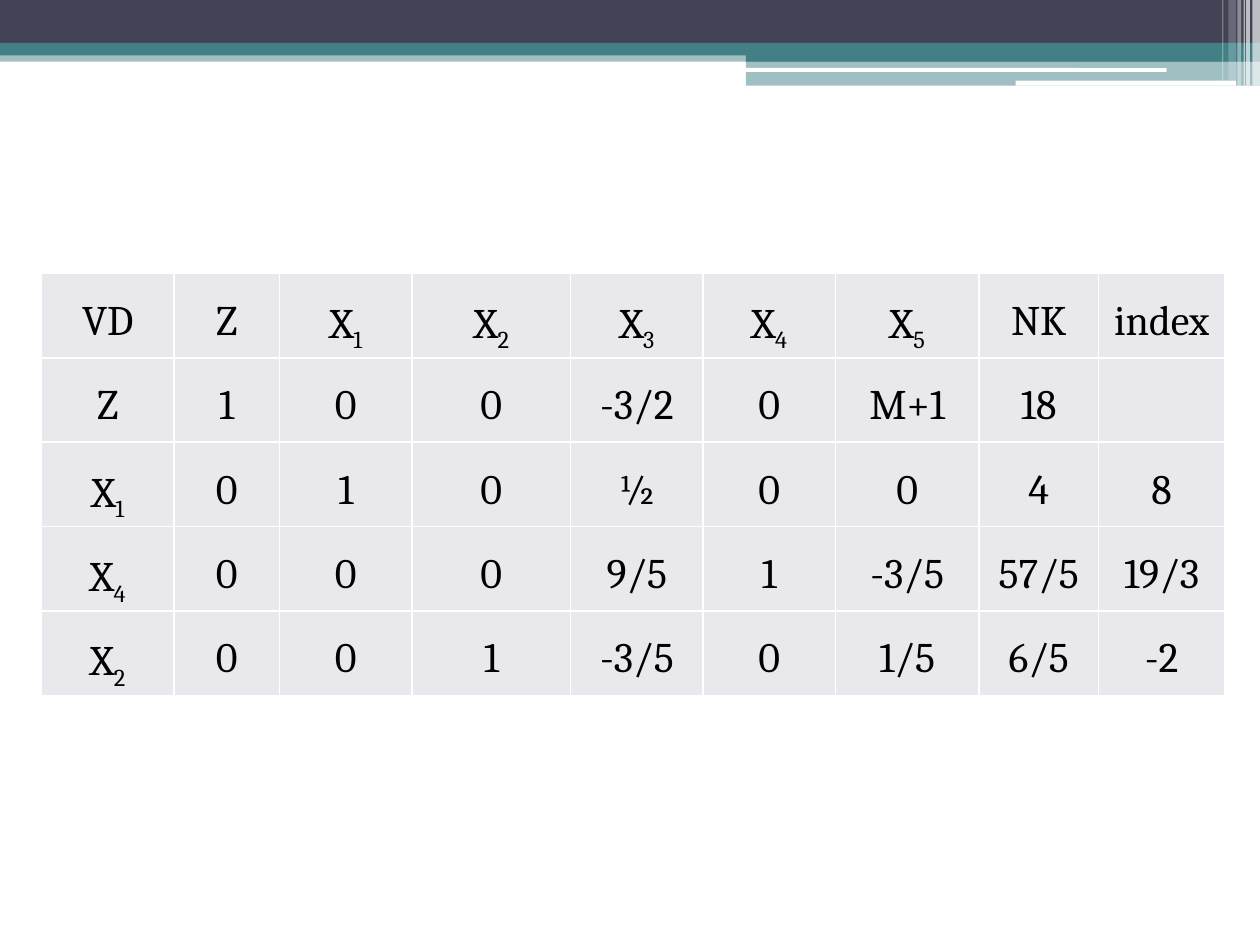
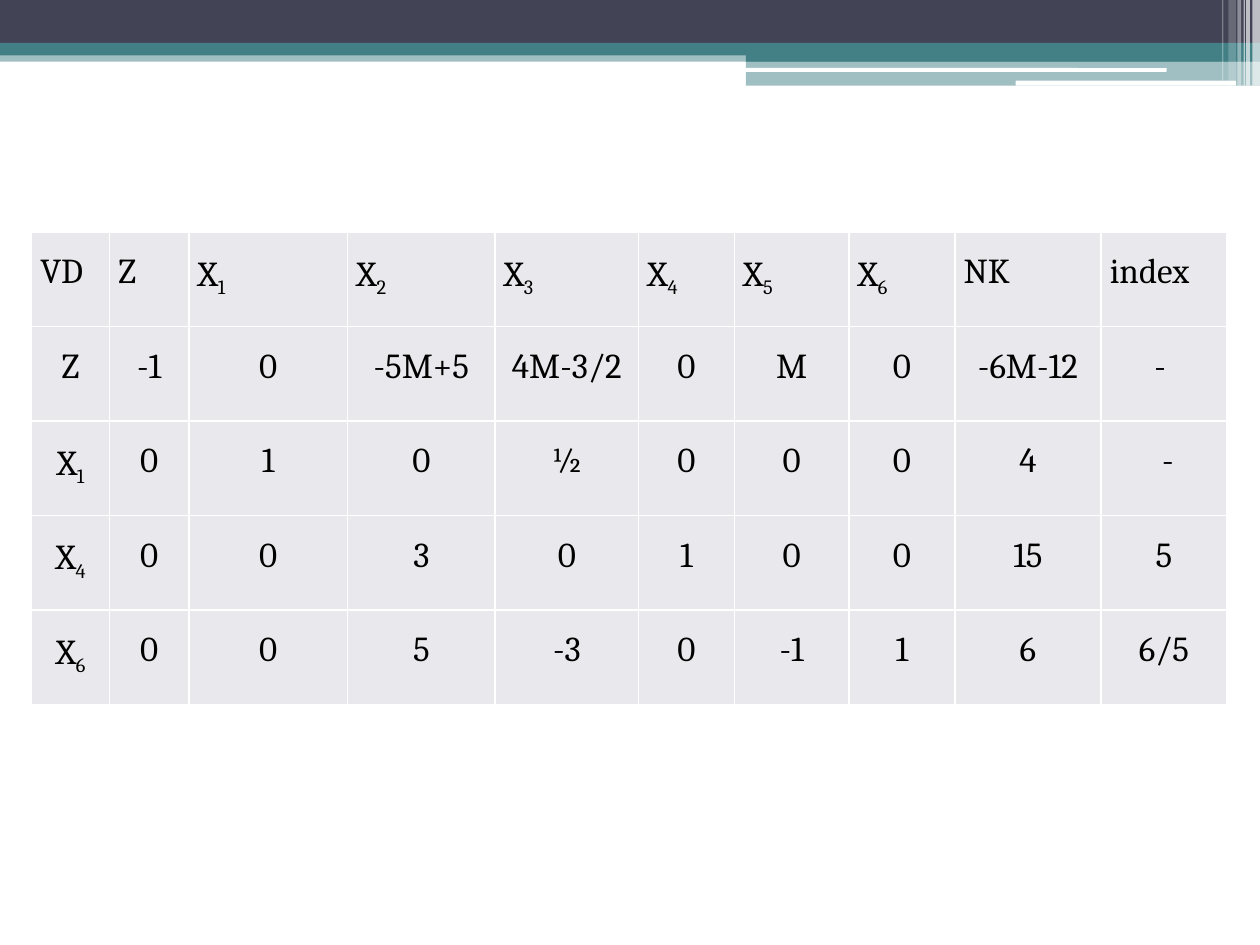
"""Build two simplex tableau slides under a shared layered band."""
from dataclasses import dataclass

from lxml import etree
from pptx import Presentation
from pptx import util as u
from pptx.dml.color import RGBColor
from pptx.enum import shapes, text
from pptx.oxml.ns import qn


@dataclass(frozen=True)
class Theme:
    font: str = "Cambria"
    ink: str = "000000"
    navy: str = "424456"
    teal: str = "438086"
    white: str = "FFFFFF"
    cell: str = "E9E9ED"
    large: int = 24
    medium: int = 20
    spacing: float = 1.5
    border: int = 1


THEME = Theme()
RECT = shapes.MSO_SHAPE.RECTANGLE
ROUND = shapes.MSO_SHAPE.ROUNDED_RECTANGLE
CENTER = text.PP_ALIGN.CENTER
JUSTIFY = text.PP_ALIGN.JUSTIFY

BANDS = [
    (RECT, 0, 0.4, 10, 0.09, THEME.teal, 50),
    (RECT, 0, 0, 10, 0.34, THEME.navy, 100),
    (RECT, 0, 0.34, 10, 0.1, THEME.teal, 100),
    (RECT, 5.92, 0.39, 4.08, 0.1, THEME.teal, 100),
    (RECT, 5.92, 0.48, 4.08, 0.2, THEME.teal, 50),
    (ROUND, 5.91, 0.54, 3.35, 0.03, THEME.white, 100),
    (ROUND, 8.06, 0.64, 1.75, 0.04, THEME.white, 100),
]
STRIPES = [
    (9.94, 0.06, 0.68, 65),
    (9.89, 0.03, 0.68, 65),
    (9.87, 0.01, 0.68, 60),
    (9.82, 0.03, 0.68, 40),
    (9.75, 0.06, 0.64, 20),
    (9.7, 0.01, 0.64, 30),
]

SECOND_TABLEAU = [
    "VD|Z|X_1|X_2|X_3|X_4|X_5|NK|index",
    "Z|1|0|0|-3/2|0|M+1|18|",
    "X_1|0|1|0|½|0|0|4|8",
    "X_4|0|0|0|9/5|1|-3/5|57/5|19/3",
    "X_2|0|0|1|-3/5|0|1/5|6/5|-2",
]
FIRST_TABLEAU = [
    "VD|Z|X_1|X_2|X_3|X_4|X_5|X_6|NK|index",
    "Z|-1|0|-5M+5|4M-3/2|0|M|0|-6M-12|- ",
    "X_1|0|1|0|½|0|0|0|4| -",
    "X_4|0|0|3|0|1|0|0|15|5",
    "X_6|0|0|5|-3|0|-1|1|6|6/5",
]


class Deck:
    def __init__(self, theme):
        self.theme = theme
        self.prs = Presentation()
        self.prs.slide_width = u.Inches(10)
        self.prs.slide_height = u.Inches(7.5)
        self.s = None

    def slide(self):
        self.s = self.prs.slides.add_slide(self.prs.slide_layouts[6])
        for band in BANDS:
            self.block(*band)
        for left, width, height, alpha in STRIPES:
            self.block(RECT, left, 0, width, height, self.theme.white, alpha)

    def block(self, kind, left, top, width, height, color, alpha):
        sp = self.s.shapes.add_shape(kind, *map(u.Inches, (left, top, width, height)))
        sp.shadow.inherit = False
        sp.line.fill.background()
        sp.fill.solid()
        sp.fill.fore_color.rgb = RGBColor.from_string(color)
        if alpha < 100:
            clr = sp._element.spPr.find(qn("a:solidFill"))[0]
            etree.SubElement(clr, qn("a:alpha")).set("val", str(alpha * 1000))

    def table(self, left, top, widths, row_height, rows, size, header_align=CENTER):
        frame = self.s.shapes.add_table(
            len(rows), len(widths), u.Inches(left), u.Inches(top),
            u.Inches(sum(widths)), u.Inches(row_height * len(rows)))
        tbl = frame.table
        tbl.first_row = tbl.horz_banding = False
        for column, width in zip(tbl.columns, widths):
            column.width = u.Inches(width)
        for i, row in enumerate(rows):
            tbl.rows[i].height = u.Inches(row_height)
            for j, label in enumerate(row.split("|")):
                self.cell(tbl.cell(i, j), label, size, CENTER if i else header_align)

    def cell(self, cell, label, size, align):
        cell.margin_left = cell.margin_right = u.Inches(0.07)
        cell.margin_top = cell.margin_bottom = 0
        cell.fill.solid()
        cell.fill.fore_color.rgb = RGBColor.from_string(self.theme.cell)
        self.borders(cell)
        p = cell.text_frame.paragraphs[0]
        p.alignment = align
        p.line_spacing = self.theme.spacing
        p.font.name = self.theme.font
        p.font.size = u.Pt(size)
        p.font.color.rgb = RGBColor.from_string(self.theme.ink)
        base, _, subscript = label.partition("_")
        if base:
            p.add_run().text = base
        if subscript:
            r = p.add_run()
            r.text = subscript
            r._r.get_or_add_rPr().set("baseline", "-25000")

    def borders(self, cell):
        tc_pr = cell._tc.get_or_add_tcPr()
        for i, side in enumerate(("lnL", "lnR", "lnT", "lnB")):
            ln = etree.Element(qn(f"a:{side}"), w=str(u.Pt(self.theme.border)))
            fill = etree.SubElement(ln, qn("a:solidFill"))
            etree.SubElement(fill, qn("a:srgbClr"), val=self.theme.white)
            tc_pr.insert(i, ln)


def main():
    deck = Deck(THEME)
    deck.slide()
    deck.table(0.33, 2.17, [1.05, 0.84, 1.05, 1.26, 1.05, 1.05, 1.14, 0.95, 1],
               0.67, SECOND_TABLEAU, THEME.large)
    deck.slide()
    deck.table(0.25, 1.84, [0.62, 0.63, 1.26, 1.17, 1.14, 0.76, 0.91, 0.84, 1.16, 1],
               0.75, FIRST_TABLEAU, THEME.medium, JUSTIFY)
    deck.prs.save("out.pptx")


if __name__ == "__main__":
    main()
